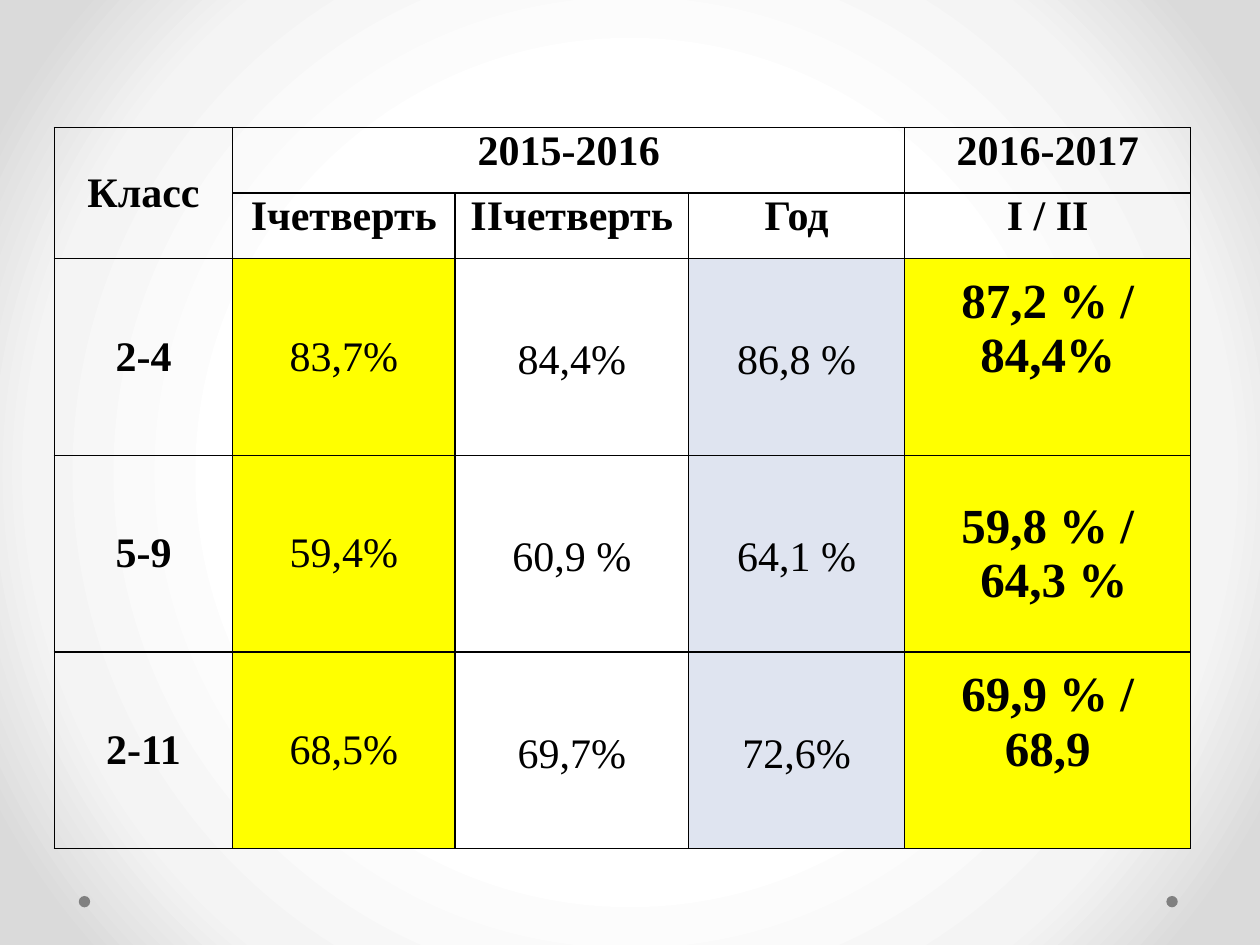
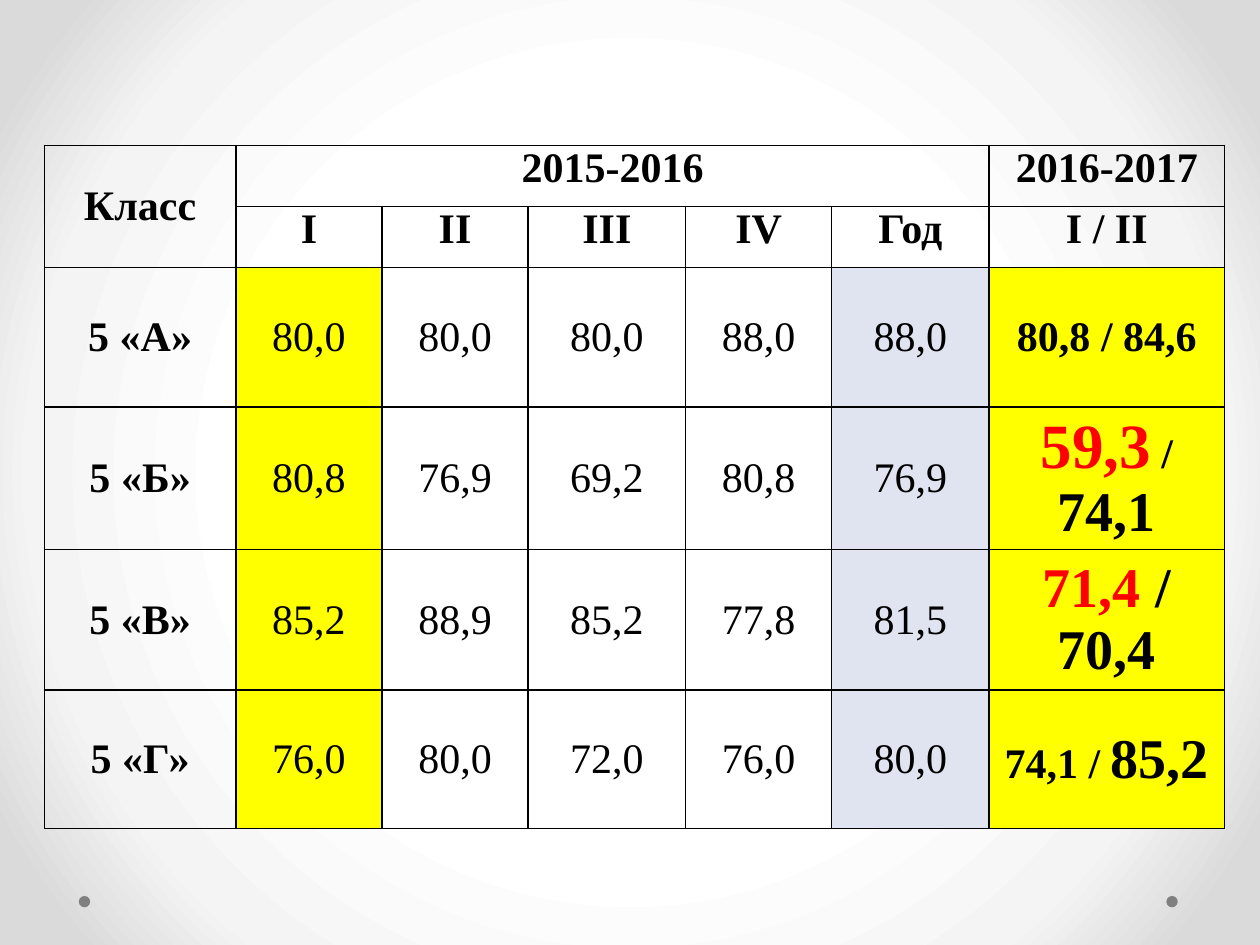
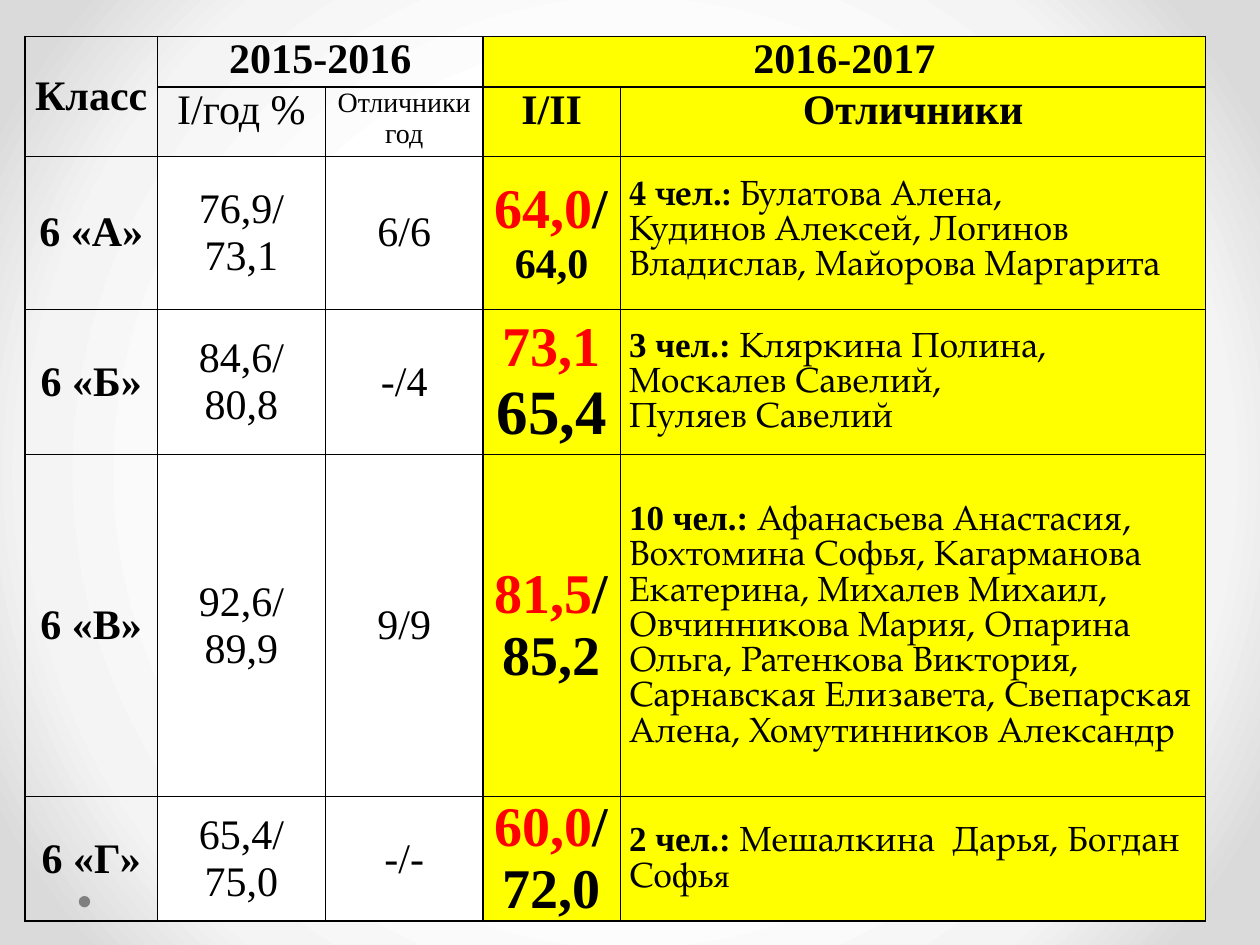
from dataclasses import dataclass

from pptx import Presentation
from pptx.dml.color import RGBColor
from pptx.enum.shapes import MSO_SHAPE
from pptx.enum.text import MSO_ANCHOR, PP_ALIGN
from pptx.oxml import parse_xml
from pptx.oxml.ns import nsdecls
from pptx.util import Pt

OVAL = MSO_SHAPE.OVAL
TOP, MIDDLE = MSO_ANCHOR.TOP, MSO_ANCHOR.MIDDLE
LEFT, CENTER = PP_ALIGN.LEFT, PP_ALIGN.CENTER

SLIDE_WIDTH, SLIDE_HEIGHT = 720, 540
COLORS = {
    "black": "000000",
    "red": "FF0000",
    "white": "FFFFFF",
    "yellow": "FFFF00",
    "lavender": "DFE4F0",
    "dot": "808080",
}
BACKDROP_STOPS = [(50, "FFFFFF"), (76, "F4F4F4"), (92, "DADADA")]
TIMES, PAGELLA = "Times New Roman", "TeX Gyre Pagella"
STYLES = {
    "plain": (24, False, "black", TIMES),
    "bold": (24, True, "black", TIMES),
    "small": (16, False, "black", TIMES),
    "strong": (28, True, "black", TIMES),
    "large": (32, True, "black", TIMES),
    "huge": (36, True, "black", TIMES),
    "alert": (32, True, "red", TIMES),
    "huge alert": (36, True, "red", TIMES),
    "count": (20, True, "black", TIMES),
    "pagella count": (20, True, "black", PAGELLA),
    "names": (20, False, "black", PAGELLA),
    "small names": (18, False, "black", PAGELLA),
}


@dataclass
class Column:
    width: float
    fill: str = ""
    style: str = "plain"
    align: int = CENTER
    spacing: float = 1.0
    head_fill: str = ""


def color(name):
    return RGBColor.from_string(COLORS[name])


def paint_backdrop(master):
    master.background.fill.gradient()
    gradient = master.element.xpath("./p:cSld/p:bg/p:bgPr/a:gradFill")[0]
    stops = "".join(
        f'<a:gs pos="{position * 1000}"><a:srgbClr val="{shade}"/></a:gs>'
        for position, shade in BACKDROP_STOPS
    )
    gradient.getparent().replace(gradient, parse_xml(
        f'<a:gradFill {nsdecls("a")} rotWithShape="1"><a:gsLst>{stops}</a:gsLst>'
        '<a:path path="circle"><a:fillToRect l="50000" t="50000" r="50000" b="50000"/>'
        "</a:path></a:gradFill>"
    ))


def add_corner_dots(slide, master):
    size, inset, top = 6.5, 45, 512
    for left in (inset, SLIDE_WIDTH - inset - size - 2):
        dot = slide.shapes.add_shape(OVAL, Pt(left), Pt(top), Pt(size), Pt(size))
        dot.shadow.inherit = False
        dot.fill.solid()
        dot.fill.fore_color.rgb = color("dot")
        dot.line.fill.background()
        master.shapes.element.append(dot.element)


def frame_cell(cell, fill):
    properties = cell._tc.get_or_add_tcPr()
    for side in ("lnL", "lnR", "lnT", "lnB"):
        properties.append(parse_xml(
            f'<a:{side} {nsdecls("a")} w="12700"><a:solidFill>'
            f'<a:srgbClr val="{COLORS["black"]}"/></a:solidFill></a:{side}>'
        ))
    if fill:
        cell.fill.solid()
        cell.fill.fore_color.rgb = color(fill)
    else:
        cell.fill.background()


def write_cell(cell, content, style, align=CENTER, anchor=MIDDLE, spacing=1.0):
    cell.margin_left = cell.margin_right = Pt(5)
    cell.margin_top = cell.margin_bottom = 0
    cell.vertical_anchor = anchor
    pieces = [(content, style)] if isinstance(content, str) else content
    frame = cell.text_frame
    paragraph = frame.paragraphs[0]
    for text, piece_style in pieces:
        for index, line in enumerate(text.split("\n")):
            if index:
                paragraph = frame.add_paragraph()
            run = paragraph.add_run()
            run.text = line
            size, bold, ink, typeface = STYLES[piece_style]
            run.font.size = Pt(size)
            run.font.bold = bold
            run.font.color.rgb = color(ink)
            run.font.name = typeface
    for paragraph in frame.paragraphs:
        paragraph.alignment = align
        if spacing != 1:
            paragraph.line_spacing = spacing


def add_grades(slide, left, top, columns, heights, years, terms, classes):
    width = sum(column.width for column in columns)
    table = slide.shapes.add_table(
        len(heights), len(columns), Pt(left), Pt(top), Pt(width), Pt(sum(heights))
    ).table
    table.first_row = table.horz_banding = False
    for row, height in zip(table.rows, heights):
        row.height = Pt(height)
    for index, column in enumerate(columns):
        table.columns[index].width = Pt(column.width)
        for row in range(len(heights)):
            frame_cell(table.cell(row, index), column.head_fill if row < 2 else column.fill)

    table.cell(0, 0).merge(table.cell(1, 0))
    write_cell(table.cell(0, 0), "Класс", "bold")
    first = 1
    for year, span in years:
        if span > 1:
            table.cell(0, first).merge(table.cell(0, first + span - 1))
        write_cell(table.cell(0, first), year, "bold", anchor=TOP)
        first += span
    for index, term in enumerate(terms, 1):
        write_cell(table.cell(1, index), term, "bold", anchor=TOP)
    for row, grades in enumerate(classes, 2):
        for index, (column, grade) in enumerate(zip(columns, grades)):
            write_cell(table.cell(row, index), grade, column.style, column.align,
                       spacing=column.spacing)
    return table


def school_slide(slide):
    columns = [
        Column(102, style="bold"),
        Column(127, "yellow"),
        Column(133.5, spacing=1.15),
        Column(123.5, "lavender", spacing=1.15),
        Column(163.5, "yellow", "strong"),
    ]
    table = add_grades(
        slide, 31, 73, columns, [37.4] * 2 + [112.4] * 3,
        [("2015-2016", 3), ("2016-2017", 1)],
        ["Iчетверть", "IIчетверть", "Год", "I / II"],
        [
            ["2-4", "83,7%", "84,4%", "86,8 %", "87,2 % / 84,4%"],
            ["5-9", "59,4%", "60,9 %", "64,1 %", "59,8 % /\n 64,3 %"],
            ["2-11", "68,5%", "69,7%", "72,6%", "69,9 % / 68,9"],
        ],
    )
    for raised_row in (2, 4):
        table.cell(raised_row, 4).margin_bottom = Pt(32)


def fifth_grade_slide(slide):
    columns = [
        Column(109.5, style="bold"),
        Column(83.5, "yellow"),
        Column(83.5),
        Column(90),
        Column(83.5),
        Column(90, "lavender"),
        Column(134.5, "yellow", "bold"),
    ]
    add_grades(
        slide, 25.3, 83, columns, [35, 35, 79.5, 81.5, 80.5, 79],
        [("2015-2016", 5), ("2016-2017", 1)],
        ["I", "II", "III", "IV", "Год", "I / II"],
        [
            ["5 «А»", "80,0", "80,0", "80,0", "88,0", "88,0", "80,8 / 84,6"],
            ["5 «Б»", "80,8", "76,9", "69,2", "80,8", "76,9",
             [("59,3", "huge alert"), (" / ", "bold"), ("74,1", "large")]],
            ["5 «В»", "85,2", "88,9", "85,2", "77,8", "81,5",
             [("71,4", "alert"), (" / 70,4", "large")]],
            ["5 «Г»", "76,0", "80,0", "72,0", "76,0", "80,0",
             [("74,1 / ", "bold"), ("85,2", "large")]],
        ],
    )


def sixth_grade_slide(slide):
    columns = [
        Column(75.8, style="bold"),
        Column(96, "white"),
        Column(90, "white"),
        Column(78.5, "yellow", "large", head_fill="yellow"),
        Column(334.5, "yellow", "names", LEFT, head_fill="yellow"),
    ]
    add_grades(
        slide, 14.2, 20.8, columns, [29, 39.5, 87.5, 83, 195.5, 71],
        [("2015-2016", 2), ("2016-2017", 2)],
        [[("I/год %", "plain")], [("Отличники\nгод", "small")], "I/II", "Отличники"],
        [
            ["6 «А»", "76,9/\n73,1", "6/6",
             [("64,0", "alert"), ("/", "large"), ("64,0", "bold")],
             [("4 чел.: ", "pagella count"),
              ("Булатова Алена,\nКудинов Алексей, Логинов Владислав, Майорова Маргарита",
               "names")]],
            ["6 «Б»", "84,6/\n80,8", "-/4",
             [("73,1", "alert"), ("65,4", "huge")],
             [("3 чел.: ", "count"),
              ("Кляркина Полина,\nМоскалев Савелий,\nПуляев Савелий", "names")]],
            ["6 «В»", "92,6/\n89,9", "9/9",
             [("81,5", "alert"), ("/85,2", "large")],
             [("10 чел.: ", "count"),
              ("Афанасьева Анастасия, Вохтомина Софья, Кагарманова Екатерина, "
               "Михалев Михаил, Овчинникова Мария, Опарина Ольга, Ратенкова Виктория, "
               "Сарнавская Елизавета, Свепарская Алена, Хомутинников Александр", "names")]],
            ["6 «Г»", "65,4/\n75,0", "-/-",
             [("60,0", "alert"), ("/72,0", "large")],
             [("2 чел.: ", "count"), ("Мешалкина  Дарья, Богдан Софь", "names"),
              ("я", "small names")]],
        ],
    )


def main():
    deck = Presentation()
    deck.slide_width, deck.slide_height = Pt(SLIDE_WIDTH), Pt(SLIDE_HEIGHT)
    master = deck.slide_master
    blank = deck.slide_layouts.get_by_name("Blank")
    paint_backdrop(master)
    slides = [deck.slides.add_slide(blank) for _ in range(3)]
    add_corner_dots(slides[0], master)
    for build, slide in zip((school_slide, fifth_grade_slide, sixth_grade_slide), slides):
        build(slide)
    deck.save("out.pptx")


if __name__ == "__main__":
    main()
